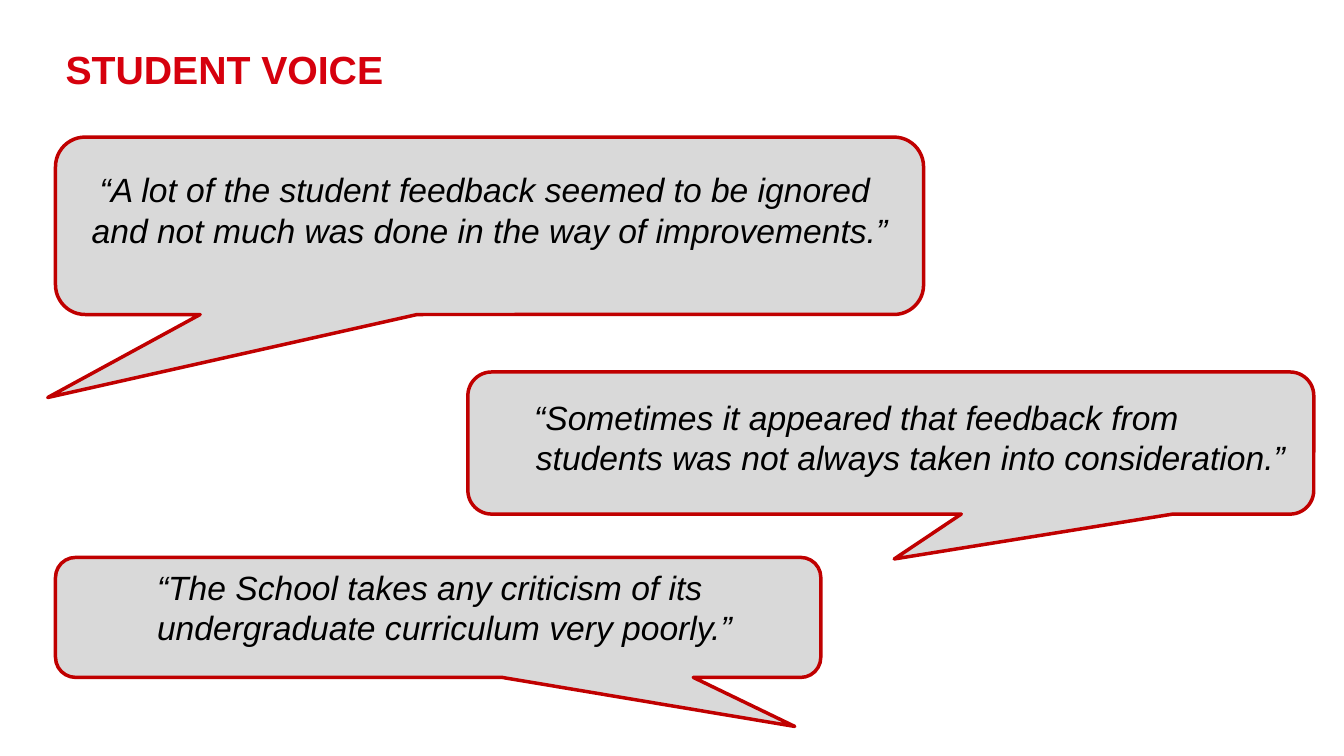
from pptx import Presentation
from pptx.dml.color import RGBColor
from pptx.enum.shapes import MSO_SHAPE
from pptx.enum.text import MSO_ANCHOR, PP_ALIGN
from pptx.util import Inches, Pt

CALLOUT = MSO_SHAPE.ROUNDED_RECTANGULAR_CALLOUT
TOP = MSO_ANCHOR.TOP
LEFT, CENTER = PP_ALIGN.LEFT, PP_ALIGN.CENTER

TITLE_RED = RGBColor(0xD6, 0x00, 0x0D)
OUTLINE_RED = RGBColor(0xC0, 0x00, 0x00)
BUBBLE_GREY = RGBColor(0xD9, 0xD9, 0xD9)
BLACK = RGBColor(0x00, 0x00, 0x00)

WIDTH, HEIGHT = Inches(13.33), Inches(7.5)
FONT = "Arial"
MARGIN = 4.13
TITLE_ONLY = 5


def area(left, top, width, height):
    """Turn percentages of the slide's size into lengths."""
    shares = zip((left, top, width, height), (WIDTH, HEIGHT) * 2)
    return [round(share * side / 100) for share, side in shares]


def add_span(para, text, size, color):
    """Add one formatted run to a paragraph."""
    span = para.add_run()
    span.text = text
    span.font.name = FONT
    span.font.size = Pt(size)
    span.font.color.rgb = color
    return span


def fill_title(page, text):
    """Place and format the slide title."""
    title = page.shapes.title
    title.left, title.top, title.width, title.height = area(MARGIN, 6, 85.67, 14.53)
    title.text_frame.vertical_anchor = TOP
    para = title.text_frame.paragraphs[0]
    para.alignment = LEFT
    para.line_spacing = 0.9
    add_span(para, text, 28, TITLE_RED).font.bold = True


def add_bubble(page, place, tail, rotation=0):
    """Draw a speech bubble whose tail tip is in percent from its centre."""
    bubble = page.shapes.add_shape(CALLOUT, *area(*place))
    bubble.rotation = rotation
    bubble.adjustments[0], bubble.adjustments[1] = (share / 100 for share in tail)
    bubble.shadow.inherit = False
    bubble.fill.solid()
    bubble.fill.fore_color.rgb = BUBBLE_GREY
    bubble.line.color.rgb = OUTLINE_RED
    bubble.line.width = Pt(2.5)


def add_quote(page, place, lines, wrap=True):
    """Write a quotation from pairs of alignment and text."""
    box = page.shapes.add_textbox(*area(*place))
    frame = box.text_frame
    frame.word_wrap = wrap
    for index, (alignment, text) in enumerate(lines):
        para = frame.add_paragraph() if index else frame.paragraphs[0]
        para.alignment = alignment
        add_span(para, text, 24, BLACK).font.italic = True


def main():
    """Build the slide and save it."""
    deck = Presentation()
    deck.slide_width, deck.slide_height = WIDTH, HEIGHT
    page = deck.slides.add_slide(deck.slide_layouts[TITLE_ONLY])
    fill_title(page, "STUDENT VOICE")

    add_bubble(page, (MARGIN, 18.13, 64.59, 23.47), (-50.9, 96.8))
    add_quote(page, (MARGIN, 21.73, 64.59, 16.13), [
        (CENTER, "“A lot of the student feedback seemed to be ignored "),
        (CENTER, "and not much was done in the way of improvements.”"),
    ])
    add_bubble(page, (34.81, 49.2, 62.94, 18.8), (-0.4, -81.6), 180)
    add_bubble(page, (MARGIN, 73.73, 56.94, 15.87), (-46.6, -90.9), 180)
    add_quote(page, (39.01, 51.87, 57.46, 16.67), [
        (LEFT, "“Sometimes it appeared that feedback from"),
        (CENTER, "students was not always taken into consideration.”"),
    ])
    add_quote(page, (10.95, 74.27, 44.71, 15.73), [
        (LEFT, "“The School takes any criticism of its"),
        (LEFT, "undergraduate curriculum very poorly.”"),
    ], wrap=False)
    deck.save("out.pptx")


if __name__ == "__main__":
    main()
